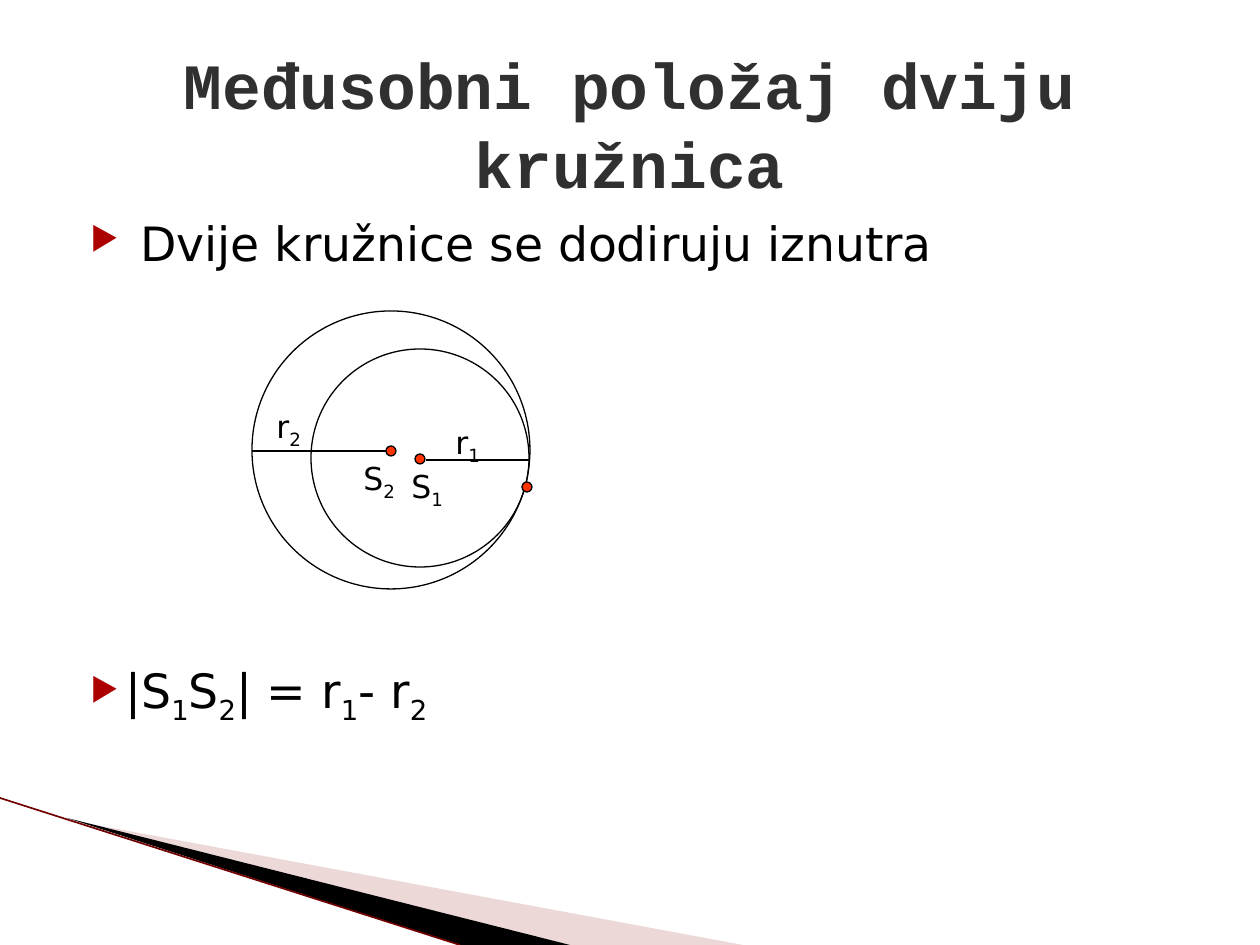
from lxml import etree
from pptx import Presentation
from pptx.dml.color import RGBColor
from pptx.enum.shapes import MSO_CONNECTOR, MSO_SHAPE
from pptx.enum.text import MSO_ANCHOR, PP_ALIGN
from pptx.oxml.ns import qn
from pptx.util import Pt

SCALE = 914400 / 126
OVAL = MSO_SHAPE.OVAL
STRAIGHT = MSO_CONNECTOR.STRAIGHT
MIDDLE = MSO_ANCHOR.MIDDLE
CENTER = PP_ALIGN.CENTER
COLORS = {
    "title": "303030",
    "black": "000000",
    "bullet": "AD0101",
    "dot": "FF3300",
    "pale": "D29E9E",
    "edge": "700000",
}
TITLE_FONT = "Courier New"
BODY_FONT = "DejaVu Sans"


def px(length):
    return round(length * SCALE)


def rgb(name):
    return RGBColor.from_string(COLORS[name])


class SlideBuilder:
    def __init__(self, slide):
        self.slide = slide

    def wedge(self, points, color, opacity=100):
        builder = self.slide.shapes.build_freeform(*points[0], scale=SCALE)
        builder.add_line_segments(points[1:], close=True)
        shape = builder.convert_to_shape()
        shape.shadow.inherit = False
        shape.line.fill.background()
        shape.fill.solid()
        shape.fill.fore_color.rgb = rgb(color)
        if opacity < 100:
            color_element = shape._element.spPr.find(".//" + qn("a:srgbClr"))
            alpha = etree.SubElement(color_element, qn("a:alpha"))
            alpha.set("val", str(opacity * 1000))

    def line(self, start, end, color="black", width=0.75):
        connector = self.slide.shapes.add_connector(
            STRAIGHT, *map(px, start + end))
        connector.line.color.rgb = rgb(color)
        connector.line.width = Pt(width)
        etree.SubElement(connector._element.spPr, qn("a:effectLst"))

    def circle(self, left, top, size, fill=None):
        shape = self.slide.shapes.add_shape(
            OVAL, px(left), px(top), px(size), px(size))
        shape.shadow.inherit = False
        shape.line.color.rgb = rgb("black")
        shape.line.width = Pt(0.75)
        if fill:
            shape.fill.solid()
            shape.fill.fore_color.rgb = rgb(fill)
        else:
            shape.fill.background()

    def text_box(self, left, top, width, height):
        shape = self.slide.shapes.add_textbox(*map(px, (left, top, width, height)))
        shape.text_frame.word_wrap = True
        return shape.text_frame

    def title(self, text, left, top, width, height):
        frame = self.text_box(left, top, width, height)
        frame.text = text
        frame.vertical_anchor = MIDDLE
        paragraph = frame.paragraphs[0]
        paragraph.alignment = CENTER
        paragraph.line_spacing = Pt(45)
        font = paragraph.runs[0].font
        font.name, font.size, font.bold = TITLE_FONT, Pt(36.9), True
        font.color.rgb = rgb("title")

    def formula(self, paragraph, parts, size):
        for index, text in enumerate(parts):
            run = paragraph.add_run()
            run.text = text
            run.font.name, run.font.size = BODY_FONT, Pt(size)
            run.font.color.rgb = rgb("black")
            if index % 2:
                run._r.get_or_add_rPr().set("baseline", "-25000")

    def label(self, letter, subscript, left, top, width):
        frame = self.text_box(left, top, width, 50)
        self.formula(frame.paragraphs[0], [letter, subscript], 18)

    def bullet(self, parts, top):
        paragraph = self.text_box(63, top, 1134, 70).paragraphs[0]
        properties = paragraph._p.get_or_add_pPr()
        properties.set("marL", str(px(50)))
        properties.set("indent", str(px(-35)))
        color = etree.SubElement(properties, qn("a:buClr"))
        etree.SubElement(color, qn("a:srgbClr")).set("val", COLORS["bullet"])
        etree.SubElement(properties, qn("a:buSzPct")).set("val", "68000")
        etree.SubElement(properties, qn("a:buChar")).set("char", "▶")
        self.formula(paragraph, parts, 27)


def main():
    presentation = Presentation()
    presentation.slide_width, presentation.slide_height = px(1260), px(945)
    slide = presentation.slides.add_slide(presentation.slide_layouts[6])
    builder = SlideBuilder(slide)

    builder.wedge([(69, 820), (743, 945), (570, 945)], "pale", 40)
    builder.wedge([(67, 818), (570, 945), (460, 945)], "black")
    builder.line((0, 798), (460, 945), "edge", 0.95)

    builder.title("Međusobni položaj dviju kružnica", 63, 44, 1134, 157)
    builder.bullet([" Dvije kružnice se dodiruju iznutra"], 208)
    builder.bullet(["|S", "1", "S", "2", "| = r", "1", "- r", "2"], 655)

    builder.circle(311, 349, 218)
    builder.circle(252, 311, 278)
    builder.line((426, 460), (530, 460))
    builder.line((252, 451), (387, 451))
    for left, top in [(386, 446), (415, 454), (522, 482)]:
        builder.circle(left, top, 10, "dot")
    for letter, subscript, left, top, width in [
        ("S", "1", 399, 461, 69),
        ("S", "2", 351, 453, 69),
        ("r", "1", 443, 417, 59),
        ("r", "2", 264, 401, 59),
    ]:
        builder.label(letter, subscript, left, top, width)

    presentation.save("out.pptx")


if __name__ == "__main__":
    main()
